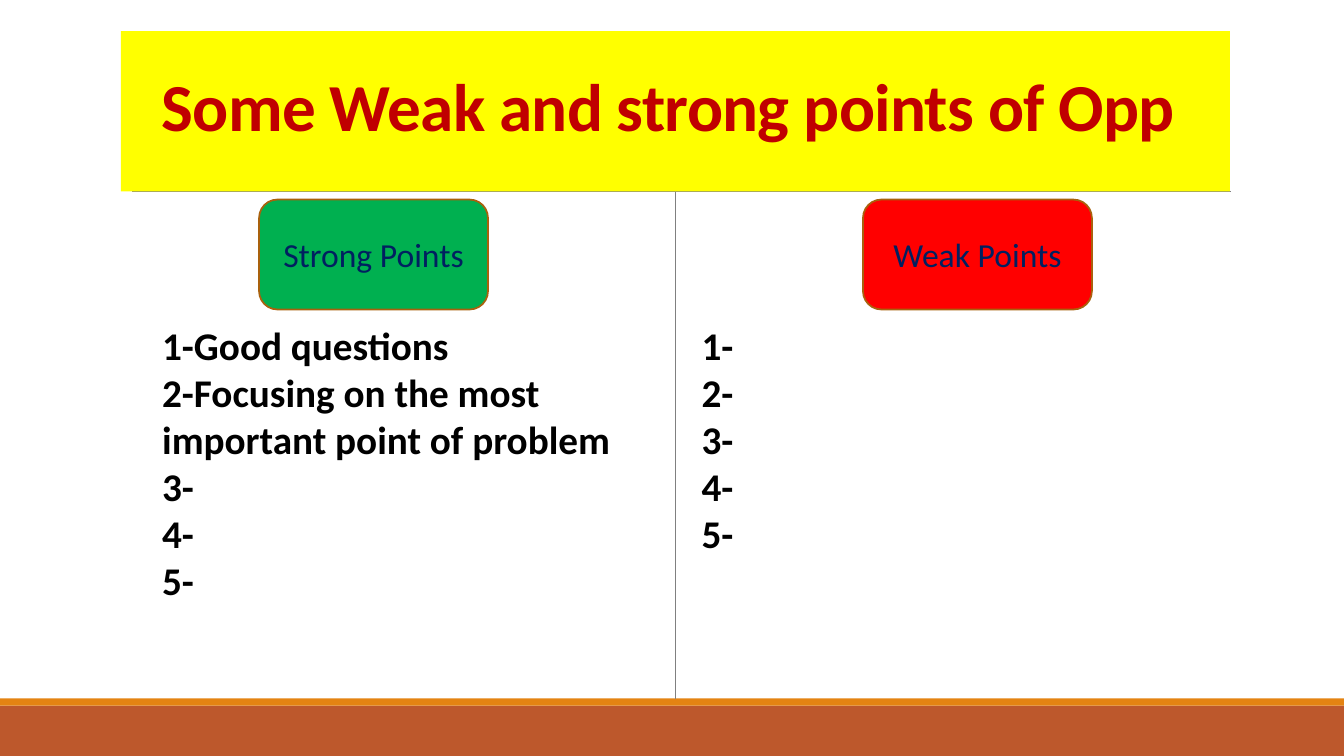
from lxml import etree
from pptx import Presentation
from pptx.dml.color import RGBColor
from pptx.enum.shapes import MSO_CONNECTOR, MSO_SHAPE
from pptx.enum.text import MSO_ANCHOR, PP_ALIGN
from pptx.oxml.ns import qn
from pptx.util import Inches, Pt

RECTANGLE = MSO_SHAPE.RECTANGLE
ROUNDED_RECTANGLE = MSO_SHAPE.ROUNDED_RECTANGLE
STRAIGHT = MSO_CONNECTOR.STRAIGHT
MIDDLE = MSO_ANCHOR.MIDDLE
CENTER = PP_ALIGN.CENTER

FONT = "Calibri"
BLACK = RGBColor(0x00, 0x00, 0x00)
YELLOW = RGBColor(0xFF, 0xFF, 0x00)
DARK_RED = RGBColor(0xC0, 0x00, 0x00)
GREEN = RGBColor(0x00, 0xB0, 0x50)
RED = RGBColor(0xFF, 0x00, 0x00)
NAVY = RGBColor(0x00, 0x20, 0x60)
BROWN = RGBColor(0xA9, 0x61, 0x0D)
ORANGE = RGBColor(0xE4, 0x83, 0x12)
RUST = RGBColor(0xBD, 0x58, 0x2C)
GRAY = RGBColor(0x80, 0x80, 0x80)

SLIDE_WIDTH, SLIDE_HEIGHT = 13.33, 7.5
BADGE_WIDTH, BADGE_HEIGHT = 2.27, 1.09
LIST_OFFSET = 1.16

STRONG_POINTS = ["1-Good questions",
                 "2-Focusing on the most important point of problem",
                 "3-", "4-", "5-"]
WEAK_POINTS = ["1-", "2-", "3-", "4-", "5-"]


def add_block(slide, kind, left, top, width, height, fill, line=None):
    shape = slide.shapes.add_shape(kind, Inches(left), Inches(top),
                                   Inches(width), Inches(height))
    shape.shadow.inherit = False
    shape.fill.solid()
    shape.fill.fore_color.rgb = fill
    if line is None:
        shape.line.fill.background()
    else:
        shape.line.color.rgb = line
        shape.line.width = Pt(1.25)
    return shape


def add_rule(slide, start_x, start_y, end_x, end_y):
    """Draw a thin gray line without a shadow."""
    rule = slide.shapes.add_connector(STRAIGHT, Inches(start_x), Inches(start_y),
                                      Inches(end_x), Inches(end_y))
    rule.line.color.rgb = GRAY
    rule.line.width = Pt(0.5)
    etree.SubElement(rule._element.spPr, qn("a:effectLst"))
    return rule


def format_runs(text_frame, size, color, bold=False):
    for paragraph in text_frame.paragraphs:
        for run in paragraph.runs:
            run.font.name = FONT
            run.font.size = Pt(size)
            run.font.bold = bold
            run.font.color.rgb = color


def set_centered_text(shape, text, size, color, bold=False):
    text_frame = shape.text_frame
    text_frame.text = text
    text_frame.vertical_anchor = MIDDLE
    text_frame.paragraphs[0].alignment = CENTER
    format_runs(text_frame, size, color, bold)


def add_footer(slide, top):
    bar_top = top + 0.07
    add_block(slide, RECTANGLE, 0, bar_top, SLIDE_WIDTH, SLIDE_HEIGHT - bar_top, RUST)
    add_block(slide, RECTANGLE, 0, top, SLIDE_WIDTH, bar_top - top, ORANGE)


def add_title(slide, left, top, width, height):
    bottom = top + height
    add_rule(slide, left + 0.11, bottom, left + width + 0.01, bottom)
    title = add_block(slide, RECTANGLE, left, top, width, height, YELLOW)
    set_centered_text(title, "Some Weak and strong points of Opp ", 48, DARK_RED, True)
    paragraph = title.text_frame.paragraphs[0]
    paragraph.line_spacing = 0.85
    paragraph.runs[0].font._element.set("spc", "-50")
    return title


def add_points_column(slide, left, top, width, height, badge_offset, heading, fill, points):
    """Place a heading badge above its list of points."""
    badge = add_block(slide, ROUNDED_RECTANGLE, left + badge_offset, top,
                      BADGE_WIDTH, BADGE_HEIGHT, fill, BROWN)
    set_centered_text(badge, heading, 24, NAVY)
    box = slide.shapes.add_textbox(Inches(left), Inches(top + LIST_OFFSET),
                                   Inches(width), Inches(height - LIST_OFFSET))
    text_frame = box.text_frame
    text_frame.word_wrap = True
    text_frame.text = "\n".join(points)
    format_runs(text_frame, 28, BLACK, True)


def main():
    presentation = Presentation()
    presentation.slide_width = Inches(SLIDE_WIDTH)
    presentation.slide_height = Inches(SLIDE_HEIGHT)
    slide = presentation.slides.add_slide(presentation.slide_layouts[6])

    add_footer(slide, 6.93)
    title = add_title(slide, 1.2, 0.31, 11, 1.59)
    divider = add_rule(slide, 6.7, 1.9, 6.7, 6.93)
    divider.begin_connect(title, 2)
    add_points_column(slide, 1.51, 1.98, 4.89, 4.09, 1.06,
                      "Strong Points", GREEN, STRONG_POINTS)
    add_points_column(slide, 6.86, 1.98, 6.36, 3.62, 1.7,
                      "Weak Points", RED, WEAK_POINTS)
    presentation.save("out.pptx")


if __name__ == "__main__":
    main()
